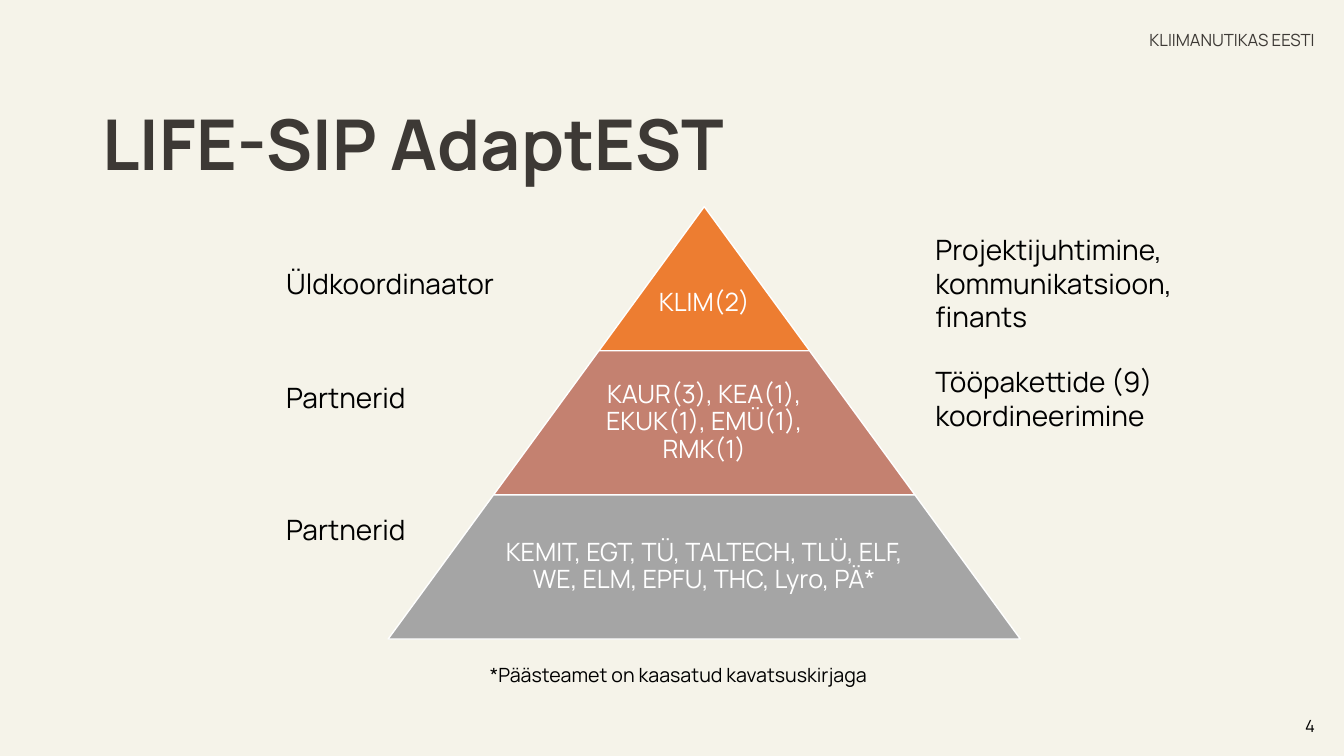
import pptx
import pptx.util
import pptx.dml.color
import pptx.enum.shapes
import pptx.enum.text

Inches = pptx.util.Inches
Align = pptx.enum.text.PP_ALIGN
Anchor = pptx.enum.text.MSO_ANCHOR

# Content
FONT = "Manrope"
CREAM, CHARCOAL, BLACK, WHITE = "F5F3E9", "3D3935", "000000", "FFFFFF"
TITLE = "LIFE-SIP AdaptEST"
HEADER = "KLIIMANUTIKAS EESTI"
PAGE_NUMBER = "4"
# Pyramid tiers: text, fill, text width as share of tier, top inset
TIERS = [
    ("KLIM(2)", "ED7D31", 1, 0.51),
    ("KAUR(3), KEA(1), EKUK(1), EMÜ(1), RMK(1)", "C48170", 0.65, 0.03),
    ("KEMIT, EGT, TÜ, TALTECH, TLÜ, ELF, WE, ELM, EPFU, THC, Lyro, PÄ*",
     "A5A5A5", 0.65, 0.03),
]
LEFT_COLUMN, RIGHT_COLUMN = 2.74, 9.18
# Labels: paragraphs, left, top, width, height, size
LABELS = [
    (["Üldkoordinaator"], LEFT_COLUMN, 2.59, 2.91, 0.44, 20),
    (["Partnerid"], LEFT_COLUMN, 3.73, 2.65, 0.44, 20),
    (["Partnerid"], LEFT_COLUMN, 5.04, 3.86, 0.44, 20),
    (["Projektijuhtimine, kommunikatsioon,", "finants"],
     RIGHT_COLUMN, 2.26, 3.24, 1.11, 20),
    (["Tööpakettide (9) koordineerimine"], RIGHT_COLUMN, 3.57, 4.03, 0.77, 20),
    (["*Päästeamet on kaasatud kavatsuskirjaga"], 4.76, 6.53, 5.51, 0.34, 14),
]

# Pyramid geometry
CENTRE, PYRAMID_TOP, TIER_HEIGHT, TIER_STEP = 6.985, 2.05, 1.43, 2.09

deck = pptx.Presentation()
deck.slide_width, deck.slide_height = Inches(13.33), Inches(7.5)
page = deck.slides.add_slide(deck.slide_layouts[6])


def paint(fill, value):
    fill.solid()
    fill.fore_color.rgb = pptx.dml.color.RGBColor.from_string(value)


def add_text(lines, left, top, width, height, size, color=BLACK, bold=False,
             align=Align.LEFT, anchor=Anchor.TOP, spacing=1.0):
    box = page.shapes.add_textbox(*map(Inches, (left, top, width, height)))
    frame = box.text_frame
    frame.word_wrap = True
    frame.vertical_anchor = anchor
    frame.text = "\n".join(lines)
    for para in frame.paragraphs:
        para.alignment = align
        para.line_spacing = spacing
        for span in para.runs:
            span.font.name = FONT
            span.font.size = pptx.util.Pt(size)
            span.font.bold = bold
            paint(span.font.fill, color)
    return frame


paint(page.background.fill, CREAM)

# Title, header and page number
add_text([TITLE], 0.92, 0.74, 11.5, 1.45, 50, CHARCOAL, True,
         anchor=Anchor.MIDDLE, spacing=0.9)
add_text([HEADER], 8.64, 0.2, 4.5, 0.4, 12, CHARCOAL,
         align=Align.RIGHT, anchor=Anchor.MIDDLE)
add_text([PAGE_NUMBER], 12.32, 7, 0.82, 0.4, 12,
         align=Align.RIGHT, anchor=Anchor.MIDDLE)

# Pyramid
for row, (text, color, share, inset) in enumerate(TIERS):
    width, top = TIER_STEP * (row + 1), PYRAMID_TOP + TIER_HEIGHT * row
    tier = page.shapes.add_shape(
        pptx.enum.shapes.MSO_SHAPE.TRAPEZOID, Inches(CENTRE - width / 2),
        Inches(top), Inches(width), Inches(TIER_HEIGHT))
    tier.adjustments[0] = TIER_STEP / 2 / TIER_HEIGHT
    tier.shadow.inherit = False
    paint(tier.fill, color)
    paint(tier.line.fill, WHITE)
    tier.line.width = pptx.util.Pt(1)

    text_width = width * share
    frame = add_text([text], CENTRE - text_width / 2, top, text_width,
                     TIER_HEIGHT, 18, WHITE, align=Align.CENTER,
                     anchor=Anchor.MIDDLE, spacing=0.9)
    frame.margin_left = frame.margin_right = frame.margin_bottom = Inches(0.03)
    frame.margin_top = Inches(inset)

# Side labels and footnote
for label in LABELS:
    add_text(*label)

deck.save("out.pptx")
